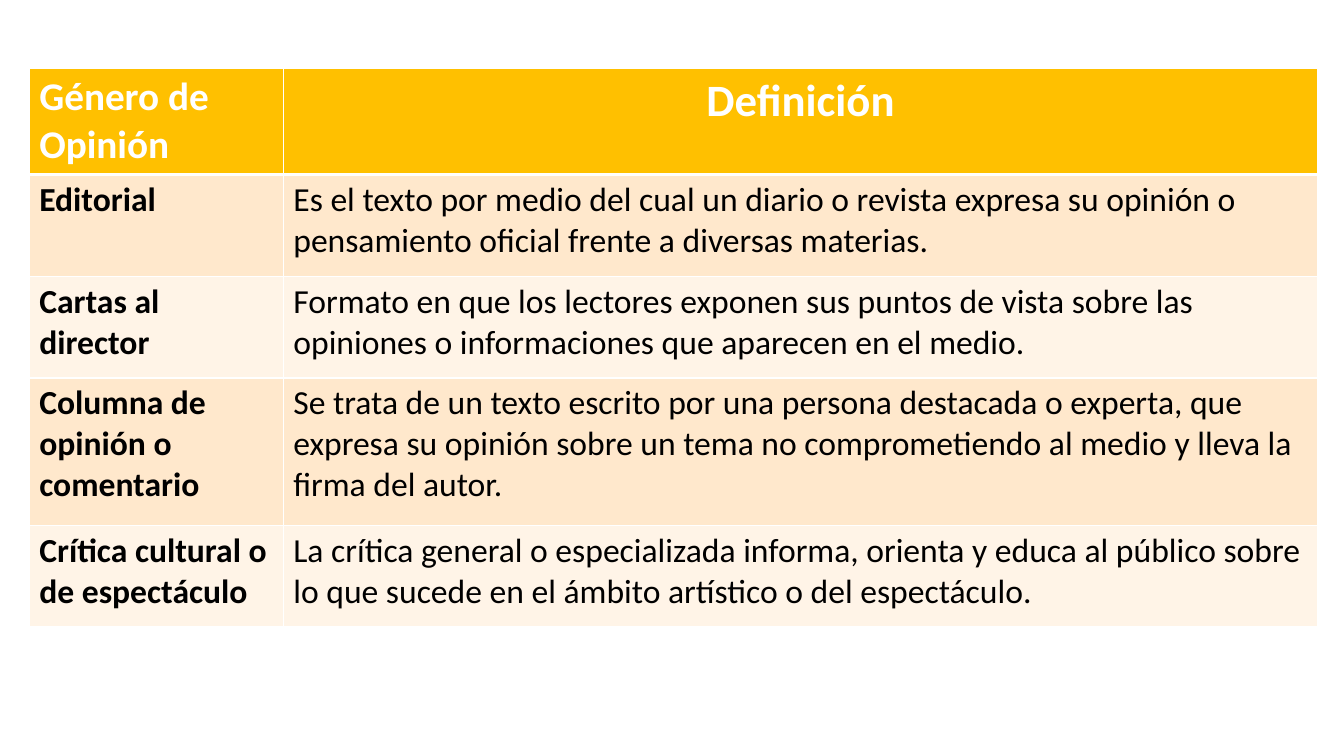
from dataclasses import dataclass

from lxml import etree
from pptx import Presentation
from pptx.dml.color import RGBColor
from pptx.enum.text import PP_ALIGN
from pptx.oxml.ns import qn
from pptx.util import Pt

LEFT, CENTER = PP_ALIGN.LEFT, PP_ALIGN.CENTER
SCALE = 9144  # EMU per px, 100 px to the inch


@dataclass(frozen=True)
class Theme:
    font: str = "Calibri"
    white: str = "FFFFFF"
    black: str = "000000"
    gold: str = "FFC000"
    bands: tuple = ("FFE8CC", "FFF4E7")
    heads: tuple = (28, 32)
    body: int = 24
    thin: int = 1
    thick: int = 3


THEME = Theme()
WIDTHS = (252, 1026)
HEIGHTS = (101, 101, 101, 146, 101)
HEADS = ("Género de Opinión", "Definición")
GENRES = (
    ("Editorial",
     "Es el texto por medio del cual un diario o revista expresa su opinión "
     "o pensamiento oficial frente a diversas materias."),
    ("Cartas al director",
     "Formato en que los lectores exponen sus puntos de vista sobre las "
     "opiniones o informaciones que aparecen en el medio."),
    ("Columna de opinión o comentario",
     "Se trata de un texto escrito por una persona destacada o experta, que "
     "expresa su opinión sobre un tema no comprometiendo al medio y lleva la "
     "firma del autor."),
    ("Crítica cultural o de espectáculo",
     "La crítica general o especializada informa, orienta y educa al público "
     "sobre lo que sucede en el ámbito artístico o del espectáculo."),
)


def px(size):
    return size * SCALE


def add_lines(cell, low):
    """Draw the four cell borders; low is the bottom width in points."""
    props = cell._tc.get_or_add_tcPr()
    for side in "LRTB":
        width = low if side == "B" else THEME.thin
        line = etree.SubElement(props, qn(f"a:ln{side}"), w=str(Pt(width)))
        fill = etree.SubElement(line, qn("a:solidFill"))
        etree.SubElement(fill, qn("a:srgbClr"), val=THEME.white)


def fill_cell(cell, text, size, color, back, bold, align=LEFT, low=THEME.thin):
    add_lines(cell, low)
    cell.fill.solid()
    cell.fill.fore_color.rgb = RGBColor.from_string(back)
    cell.text = text
    para = cell.text_frame.paragraphs[0]
    para.alignment = align
    font = para.font
    font.name, font.size, font.bold = THEME.font, Pt(size), bold
    font.color.rgb = RGBColor.from_string(color)


def add_grid(slide, left, top):
    frame = slide.shapes.add_table(len(HEIGHTS), len(WIDTHS), px(left), px(top),
                                   px(sum(WIDTHS)), px(sum(HEIGHTS)))
    table = frame.table
    for col, width in zip(table.columns, WIDTHS):
        col.width = px(width)
    for row, height in zip(table.rows, HEIGHTS):
        row.height = px(height)
    return table


def main():
    deck = Presentation()
    deck.slide_width, deck.slide_height = px(1333), px(750)
    slide = deck.slides.add_slide(deck.slide_layouts[6])
    table = add_grid(slide, 29, 68)

    # Header row
    for col, (text, size) in enumerate(zip(HEADS, THEME.heads)):
        fill_cell(table.cell(0, col), text, size, THEME.white, THEME.gold,
                  True, CENTER if col else LEFT, THEME.thick)

    # Genres and their definitions, in alternating bands
    for row, texts in enumerate(GENRES):
        back = THEME.bands[row % 2]
        for col, text in enumerate(texts):
            fill_cell(table.cell(row + 1, col), text, THEME.body, THEME.black,
                      back, col == 0)

    deck.save("out.pptx")


if __name__ == "__main__":
    main()
